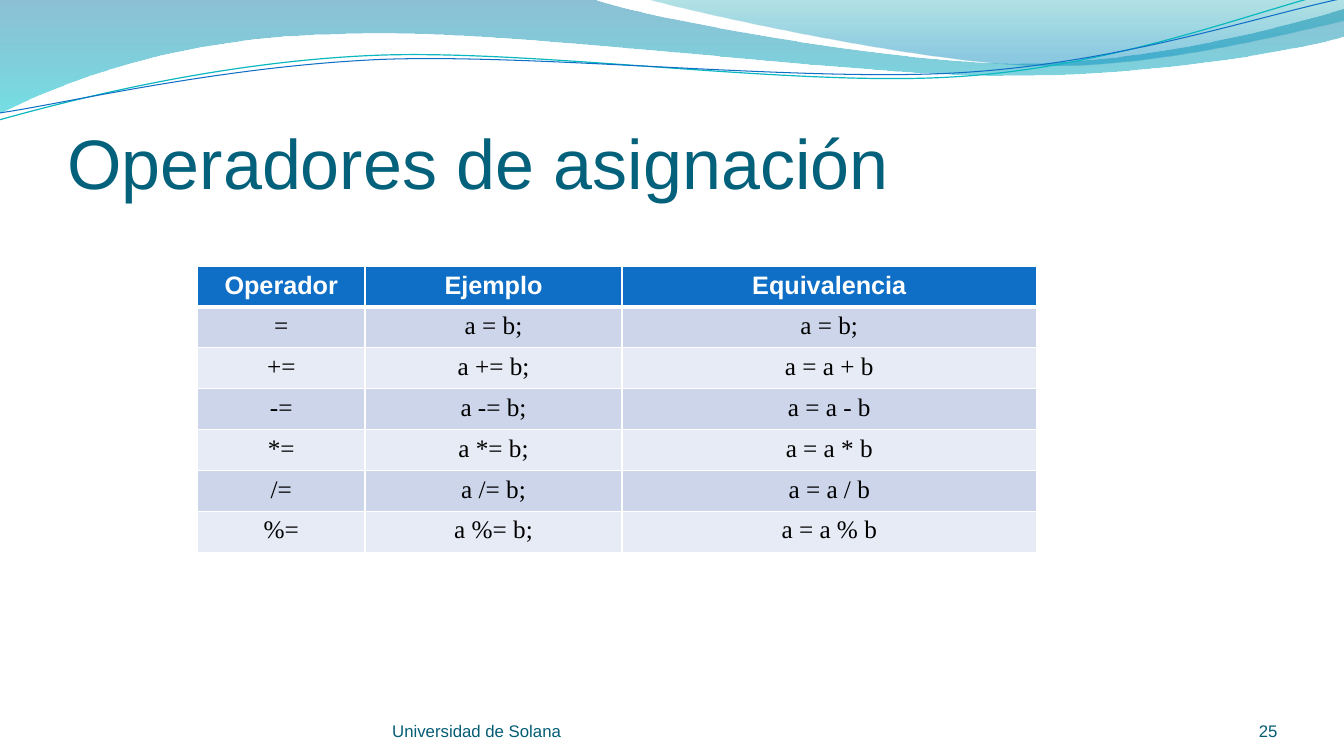
import lxml.etree
import pptx
import pptx.dml.color
import pptx.enum.text
import pptx.oxml.ns
import pptx.util

RGBColor = pptx.dml.color.RGBColor
Inches = pptx.util.Inches
Pt = pptx.util.Pt
Align = pptx.enum.text.PP_ALIGN
qn = pptx.oxml.ns.qn

WHITE = RGBColor(0xFF, 0xFF, 0xFF)
BLACK = RGBColor(0x00, 0x00, 0x00)
TITLE_TEAL = RGBColor(0x04, 0x61, 0x7B)
FOOTER_TEAL = RGBColor(0x04, 0x5D, 0x75)
HEADER_BLUE = RGBColor(0x0F, 0x6F, 0xC6)
BAND_DARK = RGBColor(0xCC, 0xD5, 0xEA)
BAND_LIGHT = RGBColor(0xE7, 0xEB, 0xF5)
WAVE_BLUE = RGBColor(0x00, 0x74, 0xA1)
WAVE_CYAN = RGBColor(0x00, 0xC6, 0xCF)
CREST_TEAL = RGBColor(0x00, 0xA1, 0xA9)
CREST_BLUE = RGBColor(0x00, 0x8B, 0xBF)
LINE_TEAL = RGBColor(0x0A, 0xB8, 0xBF)

COLUMN_WIDTHS = (1.66, 2.55, 4.11)
TABLE_HEIGHT = 2.84
OPERATOR_ROWS = (
    ("Operador", "Ejemplo", "Equivalencia"),
    ("=", "a = b;", "a = b;"),
    ("+=", "a += b;", "a = a + b"),
    ("-=", "a -= b;", "a = a - b"),
    ("*=", "a *= b;", "a = a * b"),
    ("/=", "a /= b;", "a = a / b"),
    ("%=", "a %= b;", "a = a % b"),
)
WAVE_PATH = (
    (0, 0), (5.87, -0.01),
    (6.34, 0.17, 8.85, 0.63, 10.11, 0.63), (11.38, 0.63, 12.78, 0.26, 13.33, 0.09),
    (13.35, 0.36),
    (13.11, 0.44, 11.6, 0.76, 9.94, 0.75), (8.29, 0.75, 5.09, 0.28, 3.43, 0.34),
    (1.72, 0.36, 0.61, 0.83, -0.01, 1.13),
)
CREST_PATH = (
    (6.39, -0.01),
    (6.79, 0.11, 9.09, 0.62, 10.25, 0.65), (11.41, 0.69, 12.82, 0.32, 13.33, 0.21),
    (13.33, 0),
)
TEAL_LINE_PATH = (
    (-0.01, 1.19),
    (0.64, 1.01, 2.11, 0.62, 3.69, 0.55), (5.27, 0.48, 7.9, 0.87, 9.5, 0.76),
    (11.1, 0.66, 12.52, 0.08, 13.31, -0.1),
)
BLUE_LINE_PATH = (
    (0, 1.12),
    (0.63, 1.03, 2.18, 0.66, 3.78, 0.59), (5.37, 0.53, 7.96, 0.82, 9.55, 0.72),
    (11.15, 0.62, 12.55, 0.14, 13.34, -0.02),
)


def add_outline(page, path, closed):
    """Add a freeform whose six-number segments are Bezier curves."""
    points = [(Inches(x), Inches(y)) for segment in path
              for x, y in zip(segment[::2], segment[1::2])]
    builder = page.shapes.build_freeform(*points[0], scale=1.0)
    builder.add_line_segments(points[1:], close=closed)
    shape = builder.convert_to_shape()
    shape.shadow.inherit = False
    steps = iter(list(shape.element.iter(qn("a:lnTo"))))
    for segment in path[1:]:
        step = next(steps)
        if len(segment) == 6:
            curve = lxml.etree.Element(qn("a:cubicBezTo"))
            step.addprevious(curve)
            for corner in (step, next(steps), next(steps)):
                curve.append(corner[0])
                corner.getparent().remove(corner)
    return shape


def add_wave(page, path, stops):
    """Add a wave with a translucent gradient running downwards."""
    shape = add_outline(page, path, True)
    shape.line.fill.background()
    shape.fill.gradient()
    shape.fill.gradient_angle = 270
    for stop, (position, color, _) in zip(shape.fill.gradient_stops, stops):
        stop.position = position
        stop.color.rgb = color
    colors = list(shape.element.spPr.iter(qn("a:srgbClr")))
    for element, (_, _, opacity) in zip(colors, stops):
        alpha = lxml.etree.SubElement(element, qn("a:alpha"))
        alpha.set("val", str(opacity * 1000))


def add_wave_line(page, path, color, width):
    """Add a thin curved line."""
    shape = add_outline(page, path, False)
    shape.fill.background()
    shape.line.color.rgb = color
    shape.line.width = Pt(width)


def write(frame, text, size, font, color, align=Align.LEFT, bold=False):
    """Write one formatted run in the first paragraph of a frame."""
    para = frame.paragraphs[0]
    para.alignment = align
    span = para.add_run()
    span.text = text
    span.font.size = Pt(size)
    span.font.name = font
    span.font.bold = bold
    span.font.color.rgb = color


def add_label(page, left, top, width, height, text, size, color,
              align=Align.LEFT, inset=0):
    """Add a bottom-anchored text box."""
    box = page.shapes.add_textbox(Inches(left), Inches(top), Inches(width), Inches(height))
    frame = box.text_frame
    frame.word_wrap = True
    frame.vertical_anchor = pptx.enum.text.MSO_ANCHOR.BOTTOM
    frame.margin_left = frame.margin_right = frame.margin_bottom = 0
    frame.margin_top = Inches(inset)
    write(frame, text, size, "Arial", color, align)


def set_borders(cell, top, bottom):
    """Draw white borders, with top and bottom widths in points."""
    properties = cell._tc.get_or_add_tcPr()
    widths = {"a:lnL": 1, "a:lnR": 1, "a:lnT": top, "a:lnB": bottom}
    for index, (tag, width) in enumerate(widths.items()):
        line = lxml.etree.Element(qn(tag), w=str(Pt(width)))
        fill = lxml.etree.SubElement(line, qn("a:solidFill"))
        lxml.etree.SubElement(fill, qn("a:srgbClr"), val=str(WHITE))
        properties.insert(index, line)


def add_operator_table(page, left, top):
    """Add the banded table of operators."""
    table = page.shapes.add_table(
        len(OPERATOR_ROWS), len(COLUMN_WIDTHS), Inches(left), Inches(top),
        Inches(sum(COLUMN_WIDTHS)), Inches(TABLE_HEIGHT)).table
    for column, width in zip(table.columns, COLUMN_WIDTHS):
        column.width = Inches(width)
    for row, texts in enumerate(OPERATOR_ROWS):
        table.rows[row].height = Inches(TABLE_HEIGHT / len(OPERATOR_ROWS))
        header = row == 0
        band = HEADER_BLUE if header else BAND_DARK if row % 2 else BAND_LIGHT
        font, color = ("Arial", WHITE) if header else ("Times New Roman", BLACK)
        for column, text in enumerate(texts):
            cell = table.cell(row, column)
            cell.fill.solid()
            cell.fill.fore_color.rgb = band
            set_borders(cell, 3 if row == 1 else 1, 3 if header else 1)
            write(cell.text_frame, text, 18, font, color, Align.CENTER, header)


def main():
    """Build the slide on assignment operators."""
    deck = pptx.Presentation()
    deck.slide_width = Inches(13.33)
    deck.slide_height = Inches(7.5)
    page = deck.slides.add_slide(deck.slide_layouts[6])
    add_wave(page, WAVE_PATH, ((0, WAVE_BLUE, 45), (1, WAVE_CYAN, 55)))
    add_wave(page, CREST_PATH, ((0, CREST_TEAL, 30), (0.8, CREST_BLUE, 45)))
    add_wave_line(page, TEAL_LINE_PATH, LINE_TEAL, 0.85)
    add_wave_line(page, BLUE_LINE_PATH, HEADER_BLUE, 0.75)
    add_label(page, 0.67, 0.77, 12, 1.25, "Operadores de asignación", 50, TITLE_TEAL,
              inset=0.05)
    add_operator_table(page, 1.96, 2.64)
    add_label(page, 3.89, 6.95, 4.89, 0.4, "Universidad de Solana", 12, FOOTER_TEAL)
    add_label(page, 11.56, 6.95, 1.11, 0.4, "25", 12, FOOTER_TEAL, Align.RIGHT)
    deck.save("out.pptx")


if __name__ == "__main__":
    main()
